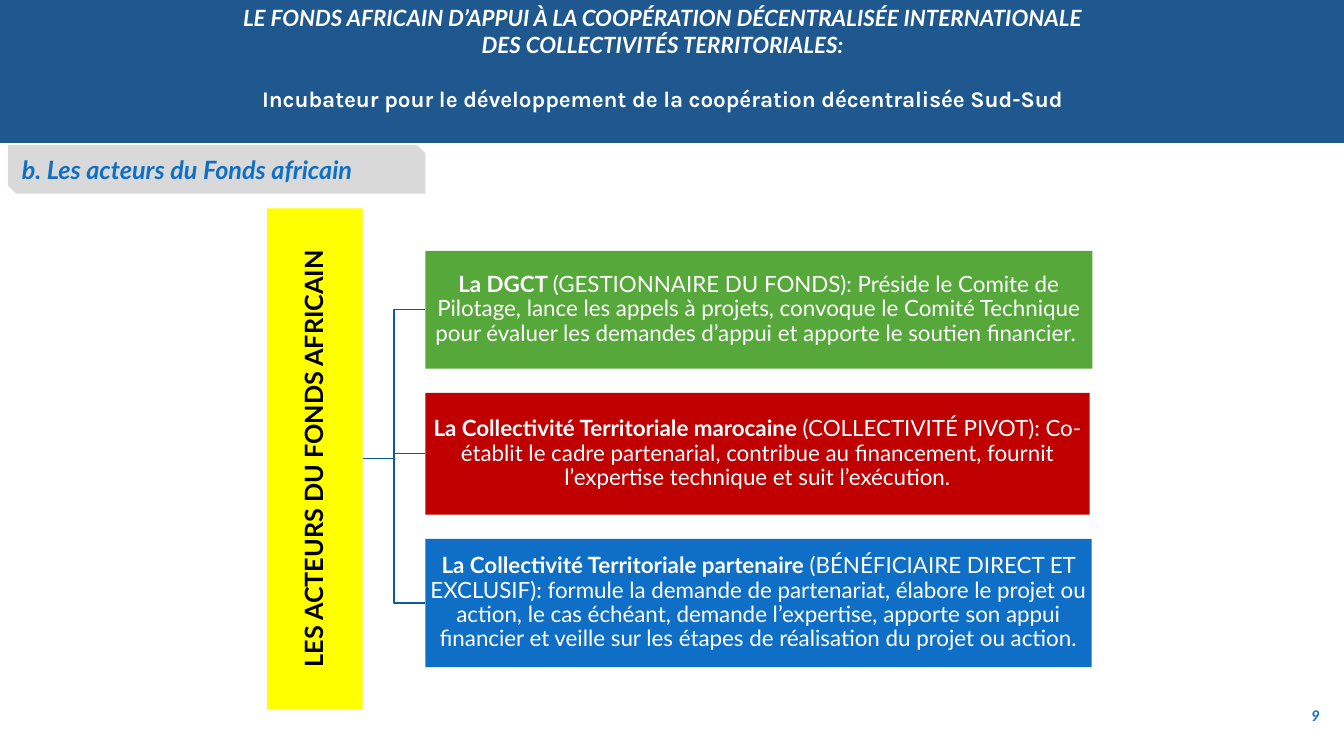
from lxml import etree
from pptx import Presentation
from pptx.dml.color import RGBColor
from pptx.enum.shapes import MSO_CONNECTOR, MSO_SHAPE
from pptx.enum.text import MSO_ANCHOR, MSO_AUTO_SIZE, PP_ALIGN
from pptx.oxml.ns import qn
from pptx.util import Cm, Pt

RECTANGLE = MSO_SHAPE.RECTANGLE
BANNER = MSO_SHAPE.PARALLELOGRAM
SNIPPED = MSO_SHAPE.SNIP_2_DIAG_RECTANGLE
ELBOW = MSO_CONNECTOR.ELBOW
MIDDLE = MSO_ANCHOR.MIDDLE
NO_FIT = MSO_AUTO_SIZE.NONE
LEFT, CENTER, RIGHT = PP_ALIGN.LEFT, PP_ALIGN.CENTER, PP_ALIGN.RIGHT

COLORS = {
    "banner": "1F588E",
    "label": "D9D9D9",
    "blue": "0F6FC6",
    "yellow": "FFFF00",
    "green": "55A839",
    "red": "C00000",
    "line": "0C599F",
    "white": "FFFFFF",
    "black": "000000",
}

ACTORS = [
    (16.81, 2.97, "green", "La DGCT ",
     "(GESTIONNAIRE DU FONDS): Préside le Comite de Pilotage, lance les appels à projets, "
     "convoque le Comité Technique pour évaluer les demandes d’appui et apporte le soutien "
     "financier. "),
    (16.74, 3.07, "red", "La Collectivité Territoriale marocaine ",
     "(COLLECTIVITÉ PIVOT): Co-établit le cadre partenarial, contribue au financement, "
     "fournit l’expertise technique et suit l’exécution."),
    (16.79, 3.23, "blue", "La Collectivité Territoriale partenaire ",
     "(BÉNÉFICIAIRE DIRECT ET EXCLUSIF): formule la demande de partenariat, élabore le "
     "projet ou action, le cas échéant, demande l’expertise, apporte son appui financier "
     "et veille sur les étapes de réalisation du projet ou action."),
]


def color(name):
    return RGBColor.from_string(COLORS[name])


def set_values(target, values):
    for name, value in values.items():
        setattr(target, name, value)


def add_span(para, text, tint, **values):
    span = para.add_run()
    span.text = text
    set_values(span.font, {"name": "Lato", "size": Pt(16), "bold": True, "italic": False} | values)
    span.font.color.rgb = color(tint)


def format_frame(box, inset=None, **values):
    frame = box.text_frame
    set_values(frame, {"word_wrap": True, "auto_size": NO_FIT, "vertical_anchor": MIDDLE} | values)
    if inset is not None:
        sides = ("margin_left", "margin_top", "margin_right", "margin_bottom")
        set_values(frame, dict.fromkeys(sides, Cm(inset)))
    return frame


def add_panel(page, kind, area, fill):
    panel = page.shapes.add_shape(kind, *map(Cm, area))
    panel.shadow.inherit = False
    panel.fill.solid()
    panel.fill.fore_color.rgb = color(fill)
    panel.line.fill.background()
    return panel


def add_header(page, left, top, width, height):
    banner = add_panel(page, BANNER, (left, top, width, height), "banner")
    banner.adjustments[0] = 0
    title = page.shapes.title
    title.element.addprevious(banner.element)
    set_values(title, {"left": Cm(left + 3.4), "top": Cm(top + 0.3),
                       "width": Cm(26.6), "height": Cm(3)})
    frame = format_frame(title, margin_top=Cm(0), margin_bottom=Cm(0.66))
    lines = [
        ("LE FONDS AFRICAIN D’APPUI À LA COOPÉRATION DÉCENTRALISÉE INTERNATIONALE", "Lato", True, 0),
        ("DES COLLECTIVITÉS TERRITORIALES:", "Lato", True, 0),
        ("Incubateur pour le développement de la coopération décentralisée Sud-Sud", "Karla", False, 19.2),
    ]
    for index, (text, font, italic, gap) in enumerate(lines):
        para = frame.add_paragraph() if index else frame.paragraphs[0]
        set_values(para, {"alignment": CENTER, "space_before": Pt(gap), "line_spacing": 1.0})
        add_span(para, text, "white", name=font, italic=italic)


def add_label(page, left, top, width, height):
    label = add_panel(page, SNIPPED, (left, top, width, height), "label")
    para = format_frame(label).paragraphs[0]
    para.alignment = LEFT
    add_span(para, "b. Les acteurs du Fonds africain", "blue", size=Pt(18), italic=True)


def add_branch(page, start_x, start_y, end_x, end_y):
    branch = page.shapes.add_connector(ELBOW, *map(Cm, (start_x, start_y, end_x, end_y)))
    branch.line.color.rgb = color("line")
    branch.line.width = Pt(1)
    properties = branch.element.find(qn("p:spPr"))
    etree.SubElement(properties, qn("a:effectLst"))


def fill_node(node):
    para = format_frame(node, inset=0.03).paragraphs[0]
    set_values(para, {"alignment": CENTER, "line_spacing": 0.9})
    return para


def add_hierarchy(page, left, top, width, height):
    middle = top + height / 2
    root = add_panel(page, RECTANGLE, (left + (width - height) / 2, middle - width / 2,
                                       height, width), "yellow")
    root.rotation = 270
    add_span(fill_node(root), "LES ACTEURS DU FONDS AFRICAIN", "black", size=Pt(18))

    root_right = left + width
    actor_left, actor_top, gap = root_right + 1.58, top + 1.07, 0.61
    for actor_width, actor_height, fill, name, role in ACTORS:
        add_branch(page, root_right, middle, actor_left, actor_top + actor_height / 2)
        actor = add_panel(page, RECTANGLE, (actor_left, actor_top, actor_width, actor_height), fill)
        para = fill_node(actor)
        add_span(para, name, "white")
        add_span(para, role, "white", bold=False)
        actor_top += actor_height + gap


def add_page_number(page, left, top, width, height):
    box = page.shapes.add_textbox(*map(Cm, (left, top, width, height)))
    para = format_frame(box).paragraphs[0]
    para.alignment = RIGHT
    add_span(para, "9", "blue", size=Pt(10.5), italic=True)


def main():
    deck = Presentation()
    set_values(deck, {"slide_width": Cm(33.87), "slide_height": Cm(19.05)})
    page = deck.slides.add_slide(deck.slide_layouts[5])
    add_header(page, 0, 0, 33.87, 3.61)
    add_label(page, 0.2, 3.66, 10.52, 1.22)
    add_hierarchy(page, 6.73, 5.25, 2.41, 12.62)
    add_page_number(page, 32.44, 17.53, 1.07, 1.02)
    deck.save("out.pptx")


if __name__ == "__main__":
    main()
